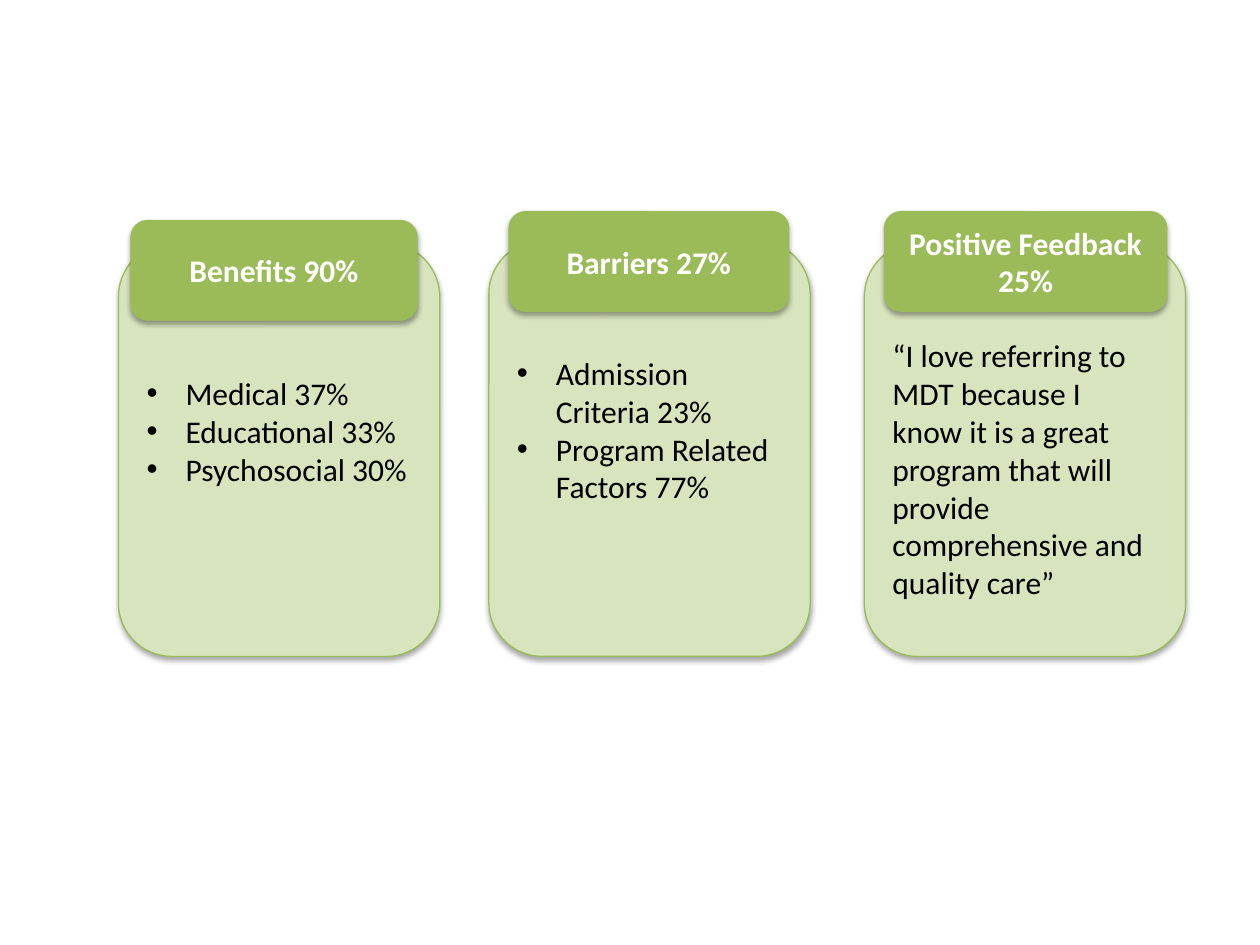
from lxml import etree
from pptx import Presentation
from pptx import util as u
from pptx.dml.color import RGBColor
from pptx.enum import shapes, text
from pptx.oxml import ns

Inches = u.Inches
GREEN, PALE_GREEN, BLACK, WHITE = "9BBB59", "D7E4BD", "000000", "FFFFFF"


def color(value):
    return RGBColor.from_string(value)


def add_box(slide, position, fill, lines, font_color):
    shape = slide.shapes.add_shape(
        shapes.MSO_SHAPE.ROUNDED_RECTANGLE, *[Inches(length) for length in position])
    shape.fill.solid()
    shape.fill.fore_color.rgb = color(fill)
    shape.line.color.rgb = color(GREEN)
    shape.line.width = u.Pt(0.75)
    shape.shadow.inherit = False
    effects = shape._element.spPr.find(ns.qn("a:effectLst"))
    shadow = etree.SubElement(effects, ns.qn("a:outerShdw"), blurRad=str(u.Pt(3.1)),
                              dist=str(u.Pt(1.8)), dir="5400000", rotWithShape="0")
    shadow_color = etree.SubElement(shadow, ns.qn("a:srgbClr"), val=BLACK)
    etree.SubElement(shadow_color, ns.qn("a:alpha"), val="35000")
    frame = shape.text_frame
    frame.word_wrap = True
    frame.vertical_anchor = text.MSO_ANCHOR.MIDDLE
    frame.text = "\n".join(lines)
    for paragraph in frame.paragraphs:
        paragraph.alignment = text.PP_ALIGN.LEFT
        for run in paragraph.runs:
            run.font.name = "Calibri"
            run.font.size = u.Pt(18)
            run.font.color.rgb = color(font_color)
    return shape


presentation = Presentation()
presentation.slide_width, presentation.slide_height = Inches(10), Inches(7.5)
slide = presentation.slides.add_slide(presentation.slide_layouts[6])

panels = [
    ((0.94, 1.93, 2.55, 3.28), True,
     ["Medical 37%", "Educational 33%", "Psychosocial 30%"]),
    ((3.88, 1.91, 2.55, 3.3), True,
     ["Admission Criteria 23%", "Program Related Factors 77%"]),
    ((6.86, 1.93, 2.55, 3.28), False,
     ["“I love referring to MDT because I know it is a great program "
      "that will provide comprehensive and quality care”"]),
]
for position, bulleted, lines in panels:
    frame = add_box(slide, position, PALE_GREEN, lines, BLACK).text_frame
    if not bulleted:
        frame.margin_top = Inches(0.35)
        continue
    frame.margin_bottom = Inches(0.35)
    for paragraph in frame.paragraphs:
        properties = paragraph._p.get_or_add_pPr()
        properties.set("marL", str(Inches(0.31)))
        properties.set("indent", str(Inches(-0.31)))
        etree.SubElement(properties, ns.qn("a:buFont"), typeface="Arial")
        etree.SubElement(properties, ns.qn("a:buChar"), char="•")

headings = [
    ((1.04, 1.75, 2.27, 0.79), "Benefits 90%"),
    ((4.04, 1.68, 2.22, 0.79), "Barriers 27%"),
    ((7.02, 1.68, 2.24, 0.79), "Positive Feedback 25%"),
]
for position, heading in headings:
    paragraph = add_box(slide, position, GREEN, [heading], WHITE).text_frame.paragraphs[0]
    paragraph.alignment = text.PP_ALIGN.CENTER
    paragraph.runs[0].font.bold = True

presentation.save("out.pptx")
